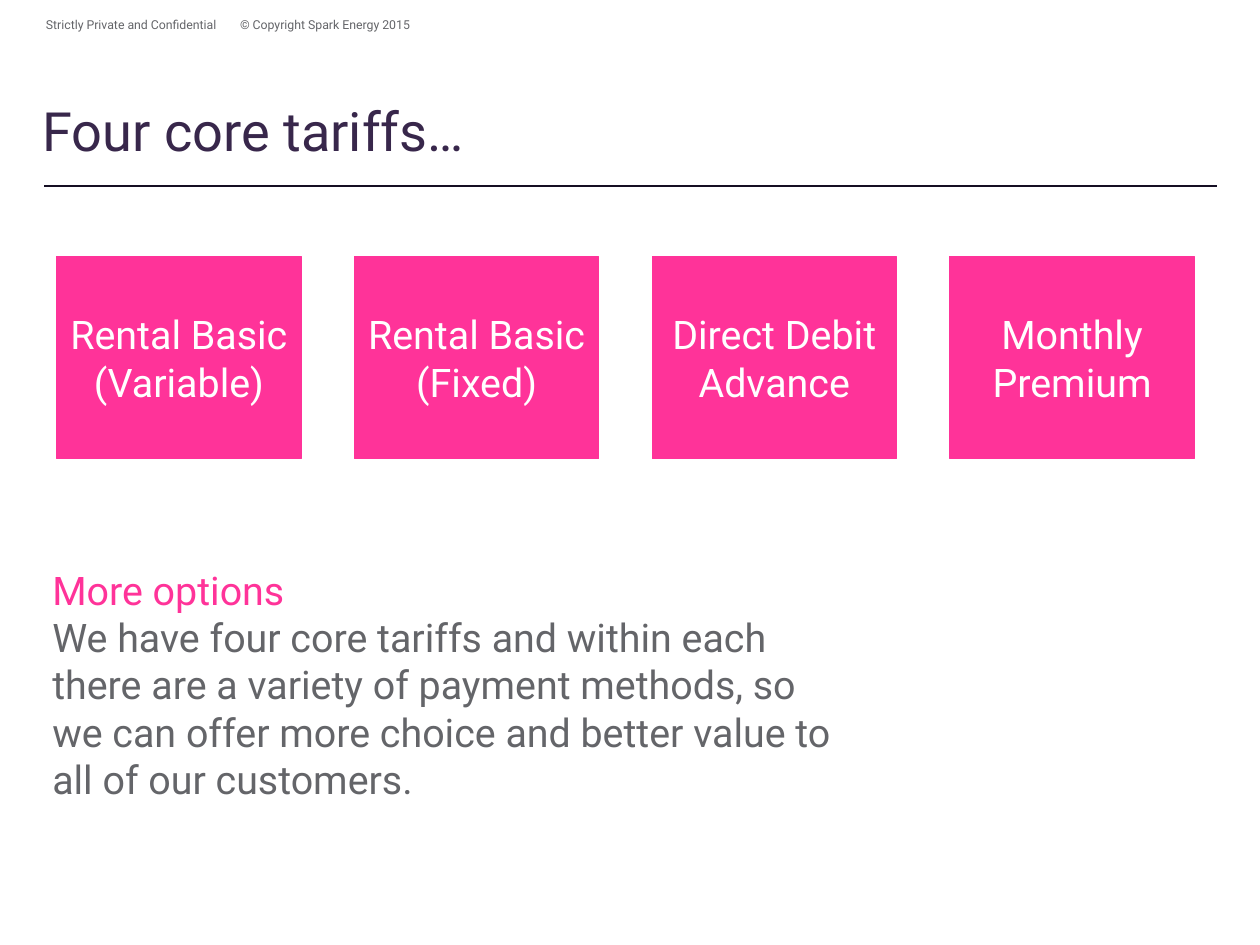
"""Build the slide that presents the four core tariffs."""
from dataclasses import dataclass

from lxml.etree import SubElement
from pptx import Presentation
from pptx.dml.color import RGBColor
from pptx.enum.shapes import MSO_CONNECTOR, MSO_SHAPE
from pptx.enum.text import MSO_ANCHOR, PP_ALIGN
from pptx.oxml.ns import qn
from pptx.shapes.base import BaseShape
from pptx.slide import Slide
from pptx.util import Inches, Pt

PINK = RGBColor(0xFF, 0x33, 0x99)
PURPLE = RGBColor(0x38, 0x27, 0x4B)
DARK = RGBColor(0x15, 0x0E, 0x23)
GREY = RGBColor(0x64, 0x65, 0x69)
WHITE = RGBColor(0xFF, 0xFF, 0xFF)

TARIFFS = ["Rental Basic (Variable)", "Rental Basic (Fixed)", "Direct Debit Advance", "Monthly Premium"]
CARD_LEFT, CARD_TOP, CARD_WIDTH, CARD_HEIGHT, CARD_PITCH = 0.64, 2.9, 2.76, 2.28, 3.36


@dataclass
class Span:
    text: str
    size: float
    color: RGBColor


@dataclass
class Block:
    left: float
    top: float
    width: float
    height: float
    spans: list[Span]
    margin_x: float = 0.1
    margin_y: float = 0.05
    anchor: MSO_ANCHOR = MSO_ANCHOR.TOP
    align: PP_ALIGN = PP_ALIGN.LEFT
    fill: RGBColor | None = None
    tab: float | None = None


BLOCKS = [
    Block(0.48, 0.31, 13.25, 1.52, [Span("Four core tariffs…", 44, PURPLE)], 0, 0, MSO_ANCHOR.BOTTOM),
    Block(0.42, 0.14, 6.22, 0.27,
          [Span("Strictly Private and Confidential\t© Copyright Spark Energy 2015", 10, GREY)], tab=2.19),
    *(Block(CARD_LEFT + index * CARD_PITCH, CARD_TOP, CARD_WIDTH, CARD_HEIGHT, [Span(tariff, 32, WHITE)],
            0.06, 0.06, MSO_ANCHOR.MIDDLE, PP_ALIGN.CENTER, PINK)
      for index, tariff in enumerate(TARIFFS)),
    Block(0.52, 6.35, 9.04, 2.6,
          [Span("More options", 32, PINK),
           Span("We have four core tariffs and within each there are a variety of payment methods, "
                "so we can offer more choice and better value to all of our customers.", 32, GREY)],
          0.07, 0.04),
]


def fill_text(box: BaseShape, block: Block) -> None:
    """Write the paragraphs of a block into its box."""
    frame = box.text_frame
    frame_format = {
        "word_wrap": True,
        "vertical_anchor": block.anchor,
        "margin_left": Inches(block.margin_x),
        "margin_right": Inches(block.margin_x),
        "margin_top": Inches(block.margin_y),
        "margin_bottom": Inches(block.margin_y),
    }
    for name, value in frame_format.items():
        setattr(frame, name, value)
    for index, span in enumerate(block.spans):
        para = frame.add_paragraph() if index else frame.paragraphs[0]
        para.alignment = block.align
        if block.tab is not None:
            tabs = SubElement(para._p.get_or_add_pPr(), qn("a:tabLst"))
            SubElement(tabs, qn("a:tab"), pos=str(Inches(block.tab)), algn="l")
        run = para.add_run()
        run.text = span.text
        for name, value in {"name": "Roboto", "size": Pt(span.size)}.items():
            setattr(run.font, name, value)
        run.font.color.rgb = span.color


def draw_block(page: Slide, block: Block) -> None:
    """Draw a text box, or a filled rectangle when the block has a fill."""
    place = [Inches(length) for length in (block.left, block.top, block.width, block.height)]
    if block.fill is None:
        box = page.shapes.add_textbox(*place)
    else:
        box = page.shapes.add_shape(MSO_SHAPE.RECTANGLE, *place)
        box.shadow.inherit = False
        box.fill.solid()
        box.fill.fore_color.rgb = block.fill
        box.line.color.rgb = block.fill
        box.line.width = Pt(0.75)
    fill_text(box, block)


def draw_rule(page: Slide) -> None:
    """Draw the thin line below the title."""
    rule = page.shapes.add_connector(
        MSO_CONNECTOR.STRAIGHT, Inches(0.5), Inches(2.1), Inches(13.73), Inches(2.1))
    rule.line.color.rgb = DARK
    rule.line.width = Pt(1)
    SubElement(rule._element.spPr, qn("a:effectLst"))


def main() -> None:
    """Create the deck and save it."""
    deck = Presentation()
    deck.slide_width, deck.slide_height = Inches(14.22), Inches(10.67)
    page = deck.slides.add_slide(deck.slide_layouts[6])
    draw_rule(page)
    for block in BLOCKS:
        draw_block(page, block)
    deck.save("out.pptx")


if __name__ == "__main__":
    main()
